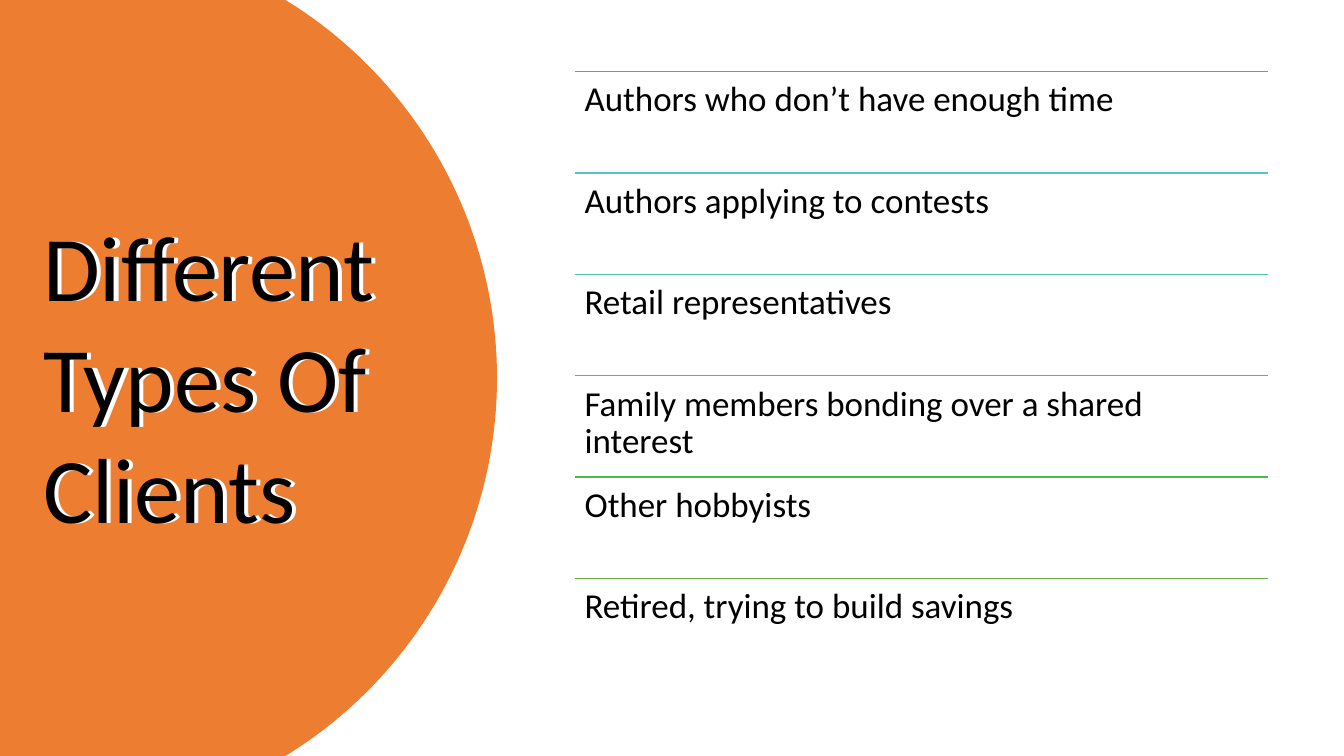
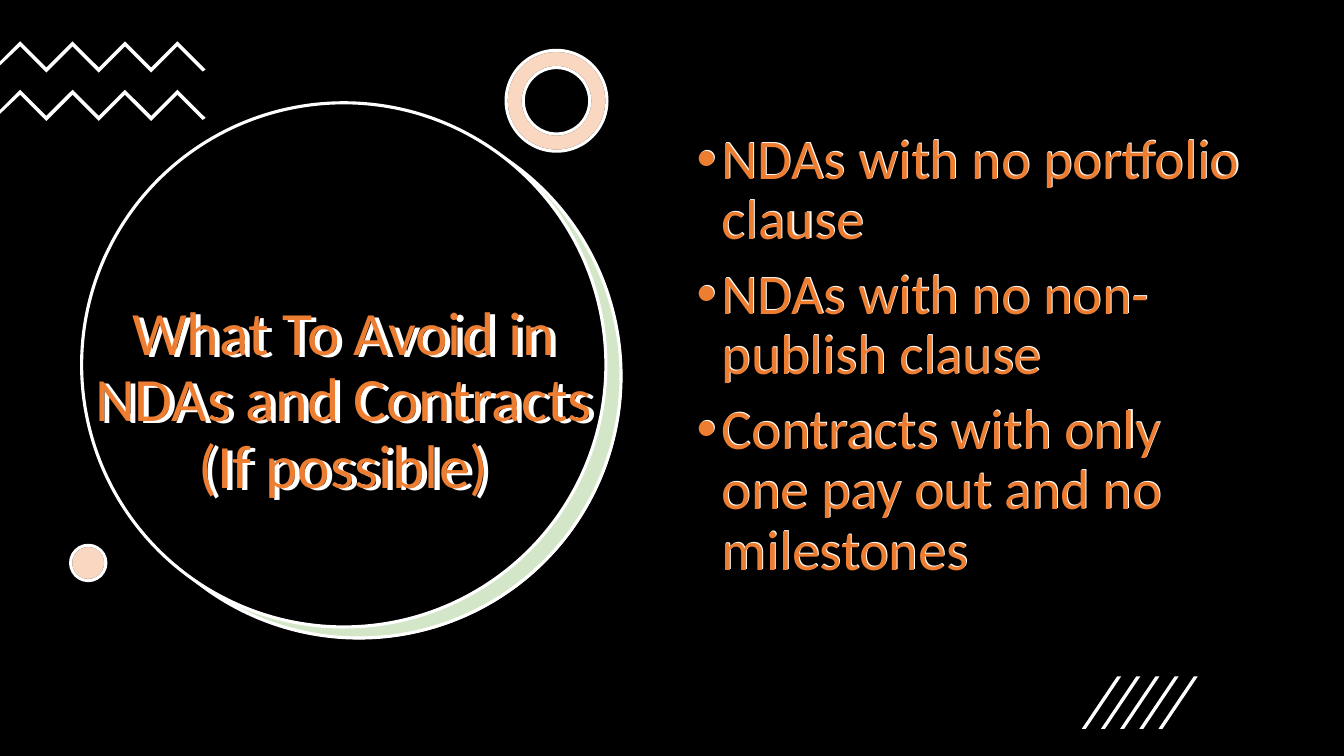
from dataclasses import dataclass
from math import asin, cos, sin

from lxml.etree import SubElement
from pptx import Presentation
from pptx.dml.color import RGBColor
from pptx.enum.shapes import MSO_CONNECTOR, MSO_SHAPE
from pptx.enum.text import MSO_ANCHOR, PP_ALIGN
from pptx.oxml.ns import qn
from pptx.util import Inches, Pt


@dataclass(frozen=True)
class Theme:
    font: str = "Calibri"
    black: str = "000000"
    white: str = "FFFFFF"
    orange: str = "ED7D31"
    green: str = "70AD47"
    rules: tuple = ("5B9BD5", "55C3CF", "50C8A7", "4BC174", "4ABA46", "70AD47")
    hero: int = 66
    title: int = 44
    body: int = 40
    row: int = 25
    edge: float = 2.25
    thin: float = 1
    tint: int = 30


THEME = Theme()
CLIENTS = (
    "Authors who don’t have enough time",
    "Authors applying to contests",
    "Retail representatives",
    "Family members bonding over a shared interest",
    "Other hobbyists",
    "Retired, trying to build savings",
)
RISKS = (
    "NDAs with no portfolio clause",
    "NDAs with no non-publish clause",
    "Contracts with only one pay out and no milestones",
)


def color(code):
    return RGBColor.from_string(code)


def paint(shape, fill, line=None, alpha=None):
    shape.shadow.inherit = False
    shape.fill.solid()
    shape.fill.fore_color.rgb = color(fill)
    if alpha is not None:
        tone = shape.element.spPr.find(qn("a:solidFill")).find(qn("a:srgbClr"))
        SubElement(tone, qn("a:alpha"), val=str(alpha * 1000))
    if line:
        shape.line.color.rgb = color(line)
        shape.line.width = Pt(THEME.edge)
    else:
        shape.line.fill.background()


def add_form(slide, kind, box, fill, line=None, alpha=None):
    shape = slide.shapes.add_shape(kind, *map(Inches, box))
    paint(shape, fill, line, alpha)
    return shape


def add_poly(slide, points, fill):
    dots = [(Inches(x), Inches(y)) for x, y in points]
    maker = slide.shapes.build_freeform(*dots[0], scale=1.0)
    maker.add_line_segments(dots[1:], close=True)
    paint(maker.convert_to_shape(), fill)


def add_rule(slide, left, right, top, tone):
    ends = map(Inches, (left, top, right, top))
    rule = slide.shapes.add_connector(MSO_CONNECTOR.STRAIGHT, *ends)
    rule.line.color.rgb = color(tone)
    rule.line.width = Pt(THEME.thin)
    SubElement(rule.element.spPr, qn("a:effectLst"))


def add_dot(para):
    para.space_before = Pt(10)
    props = para._p.get_or_add_pPr()
    props.set("marL", str(Inches(0.25)))
    props.set("indent", str(-Inches(0.25)))
    SubElement(props, qn("a:buFont"), typeface="Arial")
    SubElement(props, qn("a:buChar"), char="•")


def add_text(slide, lines, box, size, tone, space=1.0, align=PP_ALIGN.LEFT,
             anchor=MSO_ANCHOR.TOP, inset=0.05, dots=False):
    frame = slide.shapes.add_textbox(*map(Inches, box)).text_frame
    frame.word_wrap = True
    frame.vertical_anchor = anchor
    frame.margin_top = frame.margin_bottom = Inches(inset)
    frame.text = "\n".join(lines)
    for para in frame.paragraphs:
        para.alignment = align
        para.line_spacing = space
        if dots:
            add_dot(para)
        for run in para.runs:
            run.font.name = THEME.font
            run.font.size = Pt(size)
            run.font.color.rgb = color(tone)


def add_echo(slide, lines, box, shift, size, tone, **style):
    left, top, wide, high = box
    back = (left + shift[0], top + shift[1], wide, high)
    add_text(slide, lines, back, size, THEME.white, **style)
    add_text(slide, lines, box, size, tone, **style)


def add_dome(slide):
    hub, half, reach = 0.53, 3.75, 4.4
    span = asin(half / reach)
    turns = [span * (step / 40 - 1) for step in range(81)]
    arc = [(hub + reach * cos(t), half + reach * sin(t)) for t in turns]
    add_poly(slide, [(0, 0), *arc, (0, 2 * half)], THEME.orange)


def add_zigzag(slide, top):
    ridge = [(0.2 + 0.26 * i, top + 0.26 * (i % 2)) for i in range(7)]
    under = [(x, y + 0.05) for x, y in reversed(ridge)]
    add_poly(slide, [(0, top + 0.2), *ridge, (2.04, top + 0.28),
                     (2.01, top + 0.3), *under, (0, top + 0.24)], THEME.white)


def add_slash(slide, left):
    top, base = 6.71, 7.23
    add_poly(slide, [(left + 0.04, base), (left, base),
                     (left + 0.35, top), (left + 0.39, top)], THEME.white)


def add_badge(slide, kind, box):
    coats = ((THEME.white, THEME.black, None),
             (THEME.orange, THEME.white, THEME.tint))
    for coat in coats:
        shape = add_form(slide, kind, box, *coat)
        if kind == MSO_SHAPE.DONUT:
            shape.adjustments[0] = 0.17


def add_moon(slide):
    disc, size = MSO_SHAPE.OVAL, 5.2
    add_form(slide, disc, (0.97, 1.14, size, size), THEME.white)
    add_form(slide, disc, (0.96, 1.13, size, size), THEME.green,
             THEME.white, THEME.tint)
    add_form(slide, disc, (0.81, 1.02, size, size), THEME.black, THEME.white)


def new_slide(deck, back):
    slide = deck.slides.add_slide(deck.slide_layouts[6])
    slide.background.fill.solid()
    slide.background.fill.fore_color.rgb = color(back)
    return slide


def client_slide(deck):
    slide = new_slide(deck, THEME.white)
    add_dome(slide)
    left, wide, first, last = 5.7, 6.88, 0.71, 5.74
    step = (last - first) / (len(CLIENTS) - 1)
    for i, (words, tone) in enumerate(zip(CLIENTS, THEME.rules)):
        top = first + i * step
        add_rule(slide, left, left + wide, top, tone)
        add_text(slide, [words], (left, top, wide, step), THEME.row,
                 THEME.black, space=0.9, inset=0.1)
    add_echo(slide, ("Different", "Types Of", "Clients"),
             (0.33, 2.03, 4.2, 3.43), (0.04, 0), THEME.hero, THEME.black)


def risk_slide(deck):
    slide = new_slide(deck, THEME.black)
    add_moon(slide)
    for top in (0.41, 0.89):
        add_zigzag(slide, top)
    add_badge(slide, MSO_SHAPE.DONUT, (5.02, 0.5, 1, 1))
    add_badge(slide, MSO_SHAPE.OVAL, (0.7, 5.41, 0.35, 0.35))
    for i in range(5):
        add_slash(slide, 10.73 + 0.19 * i)
    add_echo(slide, ("What To Avoid in NDAs and Contracts", "(If possible)"),
             (0.65, 2.16, 5.52, 3.65), (0.05, 0.02), THEME.title, THEME.orange,
             space=0.9, align=PP_ALIGN.CENTER, anchor=MSO_ANCHOR.MIDDLE)
    add_echo(slide, RISKS, (6.81, 1.25, 5.71, 4.76), (0.01, -0.01),
             THEME.body, THEME.orange, space=0.9, dots=True)


def main():
    deck = Presentation()
    deck.slide_width = Inches(13.33)
    deck.slide_height = Inches(7.5)
    client_slide(deck)
    risk_slide(deck)
    deck.save("out.pptx")


if __name__ == "__main__":
    main()
